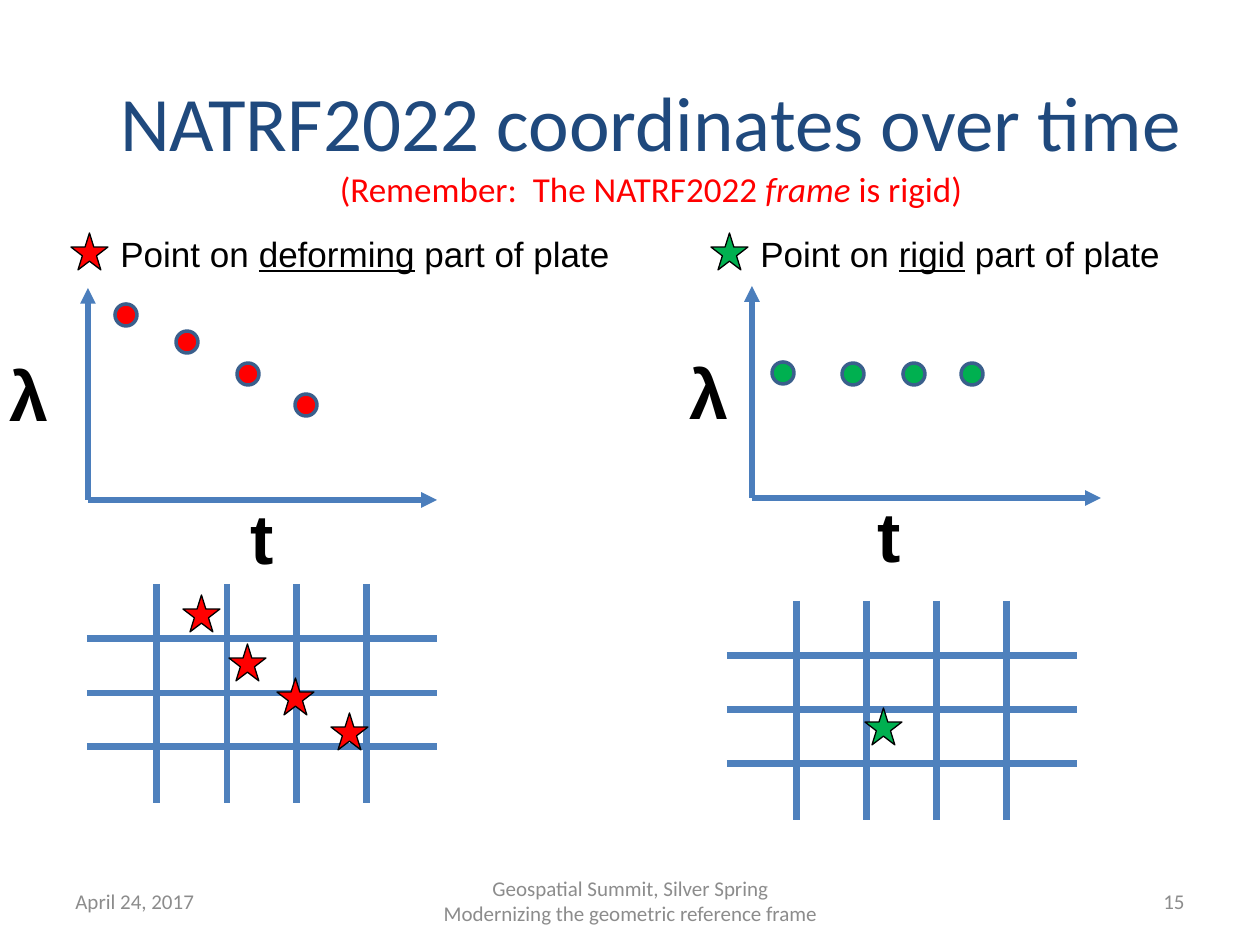
from lxml import etree
from pptx import Presentation
from pptx.dml.color import RGBColor
from pptx.enum.shapes import MSO_CONNECTOR, MSO_SHAPE
from pptx.enum.text import MSO_ANCHOR, PP_ALIGN
from pptx.oxml.ns import qn
from pptx.util import Emu, Pt

STRAIGHT = MSO_CONNECTOR.STRAIGHT
STAR, DOT = MSO_SHAPE.STAR_5_POINT, MSO_SHAPE.OVAL
LEFT, CENTER, RIGHT = PP_ALIGN.LEFT, PP_ALIGN.CENTER, PP_ALIGN.RIGHT
TOP, MIDDLE = MSO_ANCHOR.TOP, MSO_ANCHOR.MIDDLE

PX = 914400 / 126
STAR_SIZE, DOT_SIZE = 37, 22
COLORS = {
    "grid": "4F81BD", "axis": "4B7EBC", "dot_edge": "3A5F8C",
    "red": "FF0000", "green": "00B050", "black": "000000",
    "title": "1F497D", "footer": "8C8C8C",
}

prs = Presentation()
prs.slide_width, prs.slide_height = Emu(round(1260 * PX)), Emu(round(945 * PX))
slide = prs.slides.add_slide(prs.slide_layouts[6])


def add_line(start, end, color, width, arrow=False):
    ends = [Emu(round(v * PX)) for v in (*start, *end)]
    line = slide.shapes.add_connector(STRAIGHT, *ends)
    line.line.color.rgb = RGBColor.from_string(COLORS[color])
    line.line.width = Pt(width)
    if arrow:
        etree.SubElement(line.line._get_or_add_ln(), qn("a:tailEnd"), type="triangle")
    etree.SubElement(line._element.spPr, qn("a:effectLst"))


def add_text(box, paragraphs, font, align=LEFT, anchor=TOP, wrap=True):
    """Each run is (text, size, colour, styles), with styles from the letters b, i, u."""
    area = [Emu(round(v * PX)) for v in box]
    frame = slide.shapes.add_textbox(*area).text_frame
    frame.word_wrap = wrap
    frame.vertical_anchor = anchor
    for index, runs in enumerate(paragraphs):
        paragraph = frame.add_paragraph() if index else frame.paragraphs[0]
        paragraph.alignment = align
        for text, size, color, styles in runs:
            run = paragraph.add_run()
            run.text = text
            run.font.name = font
            run.font.size = Pt(size)
            run.font.color.rgb = RGBColor.from_string(COLORS[color])
            run.font.bold = "b" in styles
            run.font.italic = "i" in styles
            run.font.underline = "u" in styles


add_text((84, 63, 1134, 158), [
    [("NATRF2022 coordinates over time", 44, "title", "")],
    [("(Remember:  The NATRF2022 ", 20, "red", ""),
     ("frame", 20, "red", "i"),
     (" is rigid)", 20, "red", "")],
], "Calibri", CENTER, MIDDLE)

panels = [
    {"plate": "deforming", "color": "red", "legend": (108, 226, 518, 55),
     "origin": (88, 500), "grid": (87, 584),
     "lambda": (-3, 345), "t": (238, 488),
     "dots": [(115, 304), (176, 331), (237, 363), (295, 394)],
     "stars": [(71, 233), (183, 595), (229, 644), (277, 678), (331, 713)]},
    {"plate": "rigid", "color": "green", "legend": (748, 226, 427, 55),
     "origin": (752, 498), "grid": (727, 601),
     "lambda": (677, 343), "t": (865, 486),
     "dots": [(772, 362), (842, 363), (903, 363), (961, 363)],
     "stars": [(711, 233), (865, 708)]},
]

for panel in panels:
    grid_x, grid_y = panel["grid"]
    for column in range(1, 5):
        x = grid_x + 70 * column
        add_line((x, grid_y), (x, grid_y + 219), "grid", 4)
    for row in range(1, 4):
        y = grid_y + 1 + 54 * row
        add_line((grid_x, y), (grid_x + 350, y), "grid", 4)

    origin_x, origin_y = panel["origin"]
    for end in [(origin_x, origin_y - 212), (origin_x + 349, origin_y)]:
        add_line(panel["origin"], end, "axis", 3, arrow=True)

    add_text(panel["legend"], [[
        ("Point on ", 20, "black", ""),
        (panel["plate"], 20, "black", "u"),
        (" part of plate", 20, "black", ""),
    ]], "Arial", wrap=False)
    add_text((*panel["lambda"], 64, 97), [[("λ", 40, "black", "b")]], "Arial", wrap=False)
    add_text((*panel["t"], 49, 97), [[("t", 40, "black", "b")]], "Arial", wrap=False)

    for kind, size, places, edge, width in [
        (DOT, DOT_SIZE, panel["dots"], "dot_edge", 2),
        (STAR, STAR_SIZE, panel["stars"], "black", 0.75),
    ]:
        for x, y in places:
            area = [Emu(round(v * PX)) for v in (x, y, size, size)]
            marker = slide.shapes.add_shape(kind, *area)
            marker.shadow.inherit = False
            marker.fill.solid()
            marker.fill.fore_color.rgb = RGBColor.from_string(COLORS[panel["color"]])
            marker.line.color.rgb = RGBColor.from_string(COLORS[edge])
            marker.line.width = Pt(width)

add_text((63, 876, 294, 50), [[("April 24, 2017", 12, "footer", "")]],
         "Calibri", LEFT, MIDDLE)
add_text((431, 876, 399, 50), [
    [("Geospatial Summit, Silver Spring", 12, "footer", "")],
    [("Modernizing the geometric reference frame", 12, "footer", "")],
], "Calibri", CENTER, MIDDLE, wrap=False)
add_text((903, 876, 294, 50), [[("15", 12, "footer", "")]], "Calibri", RIGHT, MIDDLE)

prs.save("out.pptx")
